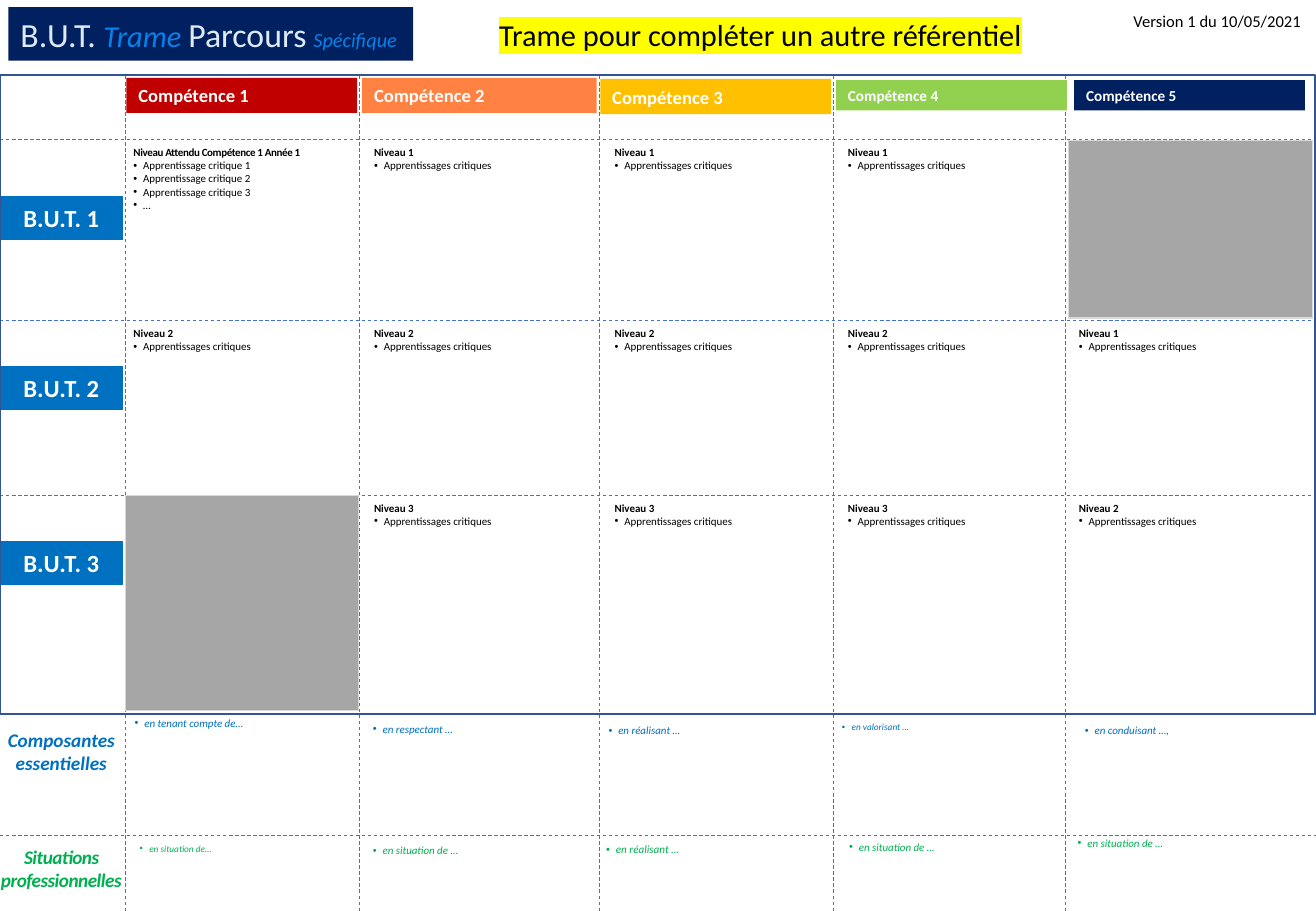
from lxml import etree
from pptx import Presentation
from pptx.dml.color import RGBColor
from pptx.enum.dml import MSO_LINE
from pptx.enum.shapes import MSO_CONNECTOR, MSO_SHAPE
from pptx.enum.text import MSO_AUTO_SIZE, PP_ALIGN
from pptx.oxml.ns import qn
from pptx.util import Inches, Pt

DASH = MSO_LINE.DASH
LINE = MSO_CONNECTOR.STRAIGHT
RECT = MSO_SHAPE.RECTANGLE
GROW = MSO_AUTO_SIZE.SHAPE_TO_FIT_TEXT
LEFT, MID = PP_ALIGN.LEFT, PP_ALIGN.CENTER

HUES = {
    "black": "000000", "white": "FFFFFF", "rule": "4472C4", "frame": "325491",
    "blue": "0070C0", "green": "00B050", "navy": "002060", "pale": "DEEBF7",
    "sky": "0683EA", "red": "C00000", "orange": "FF8243", "gold": "FFC000",
    "lime": "92D050", "grey": "A6A6A6", "edge": "D9D9D9", "yellow": "FFFF00",
}
COLS = [0, 10.3, 29.6, 49.3, 68.6, 87.7, 108.3]
ROWS = [6.2, 11.5, 26.4, 40.8, 58.8, 68.8, 75]


class Sheet:
    face = "Calibri"
    unit = 0.1

    def __init__(self):
        self.deck = Presentation()
        self.deck.slide_width = self.span(COLS[-1])
        self.deck.slide_height = self.span(ROWS[-1])
        self.slide = self.deck.slides.add_slide(self.deck.slide_layouts[6])

    def span(self, count):
        return Inches(count * self.unit)

    def hue(self, name):
        return RGBColor.from_string(HUES[name])

    def style(self, font, size, hue, bold=False, slant=False):
        font.name, font.size = self.face, Pt(size)
        font.bold, font.italic = bold, slant
        font.color.rgb = self.hue(hue)

    def rule(self, *ends):
        line = self.slide.shapes.add_connector(LINE, *map(self.span, ends))
        line.line.color.rgb = self.hue("rule")
        line.line.width = Pt(0.5)
        line.line.dash_style = DASH
        etree.SubElement(line._element.spPr, qn("a:effectLst"))

    def block(self, spot, fill=None, edge=None, width=0.75):
        shape = self.slide.shapes.add_shape(RECT, *map(self.span, spot))
        shape.shadow.inherit = False
        if fill:
            shape.fill.solid()
            shape.fill.fore_color.rgb = self.hue(fill)
        else:
            shape.fill.background()
        if edge:
            shape.line.color.rgb = self.hue(edge)
            shape.line.width = Pt(width)
        else:
            shape.line.fill.background()
        return shape

    def frame(self, shape, wrap=True):
        shape.text_frame.word_wrap = wrap
        shape.text_frame.auto_size = GROW
        return shape.text_frame

    def label(self, spot, text, size, hue, fill, edge=None, align=LEFT):
        para = self.frame(self.block(spot, fill, edge)).paragraphs[0]
        para.text, para.alignment = text, align
        self.style(para.font, size, hue, True)

    def text(self, spot, wrap=True):
        return self.frame(self.slide.shapes.add_textbox(*map(self.span, spot)), wrap)

    def plain(self, spot, text, size, hue, wrap=False, bold=False, slant=False, align=LEFT):
        para = self.text(spot, wrap).paragraphs[0]
        para.text, para.alignment = text, align
        self.style(para.font, size, hue, bold, slant)
        return para

    def tight(self, run, gap):
        run._r.get_or_add_rPr().set("spc", str(gap))

    def mark(self, run, hue):
        tag = etree.SubElement(run._r.get_or_add_rPr(), qn("a:highlight"))
        etree.SubElement(tag, qn("a:srgbClr")).set("val", HUES[hue])

    def point(self, para, text, size, hue, slant=False, lead=None):
        para.text = text
        props = para._p.get_or_add_pPr()
        props.set("marL", str(Inches(0.08)))
        props.set("indent", str(-Inches(0.08)))
        etree.SubElement(props, qn("a:buFont")).set("typeface", "Arial")
        etree.SubElement(props, qn("a:buChar")).set("char", "•")
        if lead:
            para.line_spacing = lead
        self.style(para.font, size, hue, slant=slant)

    def level(self, spot, head, items):
        body = self.text(spot)
        para = body.paragraphs[0]
        para.text = head
        self.style(para.font, 6.5, "black", True)
        for item in items:
            self.point(body.add_paragraph(), item, 6.5, "black")
        return para

    def note(self, spot, text, size, hue, lead):
        self.point(self.text(spot).paragraphs[0], text, size, hue, True, lead)

    def banner(self, spot, parts):
        para = self.frame(self.block(spot, "navy"), False).paragraphs[0]
        para.alignment = LEFT
        for text, size, hue, slant in parts:
            run = para.add_run()
            run.text = text
            self.style(run.font, size, hue, slant=slant)


def main():
    sheet = Sheet()
    for row in ROWS[1:-1]:
        sheet.rule(0, row, COLS[-1], row)
    for col in COLS[1:-1]:
        sheet.rule(col, ROWS[-1], col, ROWS[0])

    lefts = [10, 29.8, 49.6, 68.8, 87.8]
    for year in (1, 2, 3):
        for col, left in enumerate(lefts):
            rank = year - (col == 4)
            if rank == 0 or (year, col) == (3, 0):
                continue
            first = (year, col) == (1, 0)
            head = "Niveau Attendu Compétence 1 Année 1" if first else f"Niveau {rank}"
            items = ["Apprentissages critiques"]
            if first:
                items = [f"Apprentissage critique {n}" for n in (1, 2, 3)] + ["…"]
            spot = (left, ROWS[year], 20.2 if first else 18.9, 6.5 if first else 3.2)
            para = sheet.level(spot, head, items)
            if first:
                sheet.tight(para.runs[0], -20)

    for year, top in enumerate((16.2, 30.2, 44.6), 1):
        sheet.label((0, top, 10.1, 3.5), f"B.U.T. {year}", 14.6, "white", "blue", "blue", MID)

    for top, text, hue in ((59.5, "Composantes essentielles", "blue"),
                           (69.1, "Situations professionnelles", "green")):
        para = sheet.plain((-1.6, top, 13.3, 4.8), text, 11.4, hue, True, True, True, MID)
        if hue == "green":
            sheet.tight(para.runs[0], -30)

    notes = {
        "blue": [
            (10.1, 58.6, "en tenant compte de…", 6.5, 0.9),
            (29.7, 59.1, "en respectant …", 6.5, 0.9),
            (49.1, 59.1, "en réalisant …", 6.5, None),
            (68.3, 58.9, "en valorisant …", 5.5, None),
            (88.3, 59.1, "en conduisant …,", 6.5, None),
        ],
        "green": [
            (10.5, 69, "en situation de…", 5.5, 0.9),
            (29.7, 69.1, "en situation de …", 6.5, 0.9),
            (48.9, 69, "en réalisant …", 6.6, 0.9),
            (68.9, 68.8, "en situation de …", 6.5, 0.9),
            (87.7, 68.5, "en situation de …", 6.5, 0.9),
        ],
    }
    for hue, rows in notes.items():
        for left, top, text, size, lead in rows:
            sheet.note((left, top, 19.5, 2), text, size, hue, lead)

    sheet.block((0, ROWS[0], 108.2, 52.6), edge="frame", width=1.25)
    sheet.banner((0.7, 0.6, 33.3, 4.4), [
        ("B.U.T. ", 20, "pale", False),
        ("Trame ", 18, "sky", True),
        ("Parcours", 20, "pale", False),
        (" ", 18, "black", False),
        ("Spécifique", 12, "sky", True),
    ])
    heads = [
        (10.4, 6.4, 19, 2.9, 11, "red"),
        (29.8, 6.4, 19.3, 2.9, 11, "orange"),
        (49.4, 6.5, 19, 2.9, 11, "gold"),
        (68.8, 6.6, 19, 2.5, 9, "lime"),
        (88.4, 6.6, 19, 2.5, 9, "navy"),
    ]
    for rank, (*spot, size, fill) in enumerate(heads, 1):
        sheet.label(spot, f"Compétence {rank}", size, "white", fill)

    for spot in ((10.3, 40.8, 19.2, 17.7), (87.9, 11.6, 20.1, 14.6)):
        sheet.block(spot, "grey", "edge")

    sheet.plain((92.3, 0.4, 16, 2.7), "Version 1 du 10/05/2021", 9.8, "black")
    title = sheet.plain((40.1, 0.8, 46.1, 4), "Trame pour compléter un autre référentiel", 18, "black")
    sheet.mark(title.runs[0], "yellow")
    sheet.deck.save("out.pptx")


if __name__ == "__main__":
    main()
